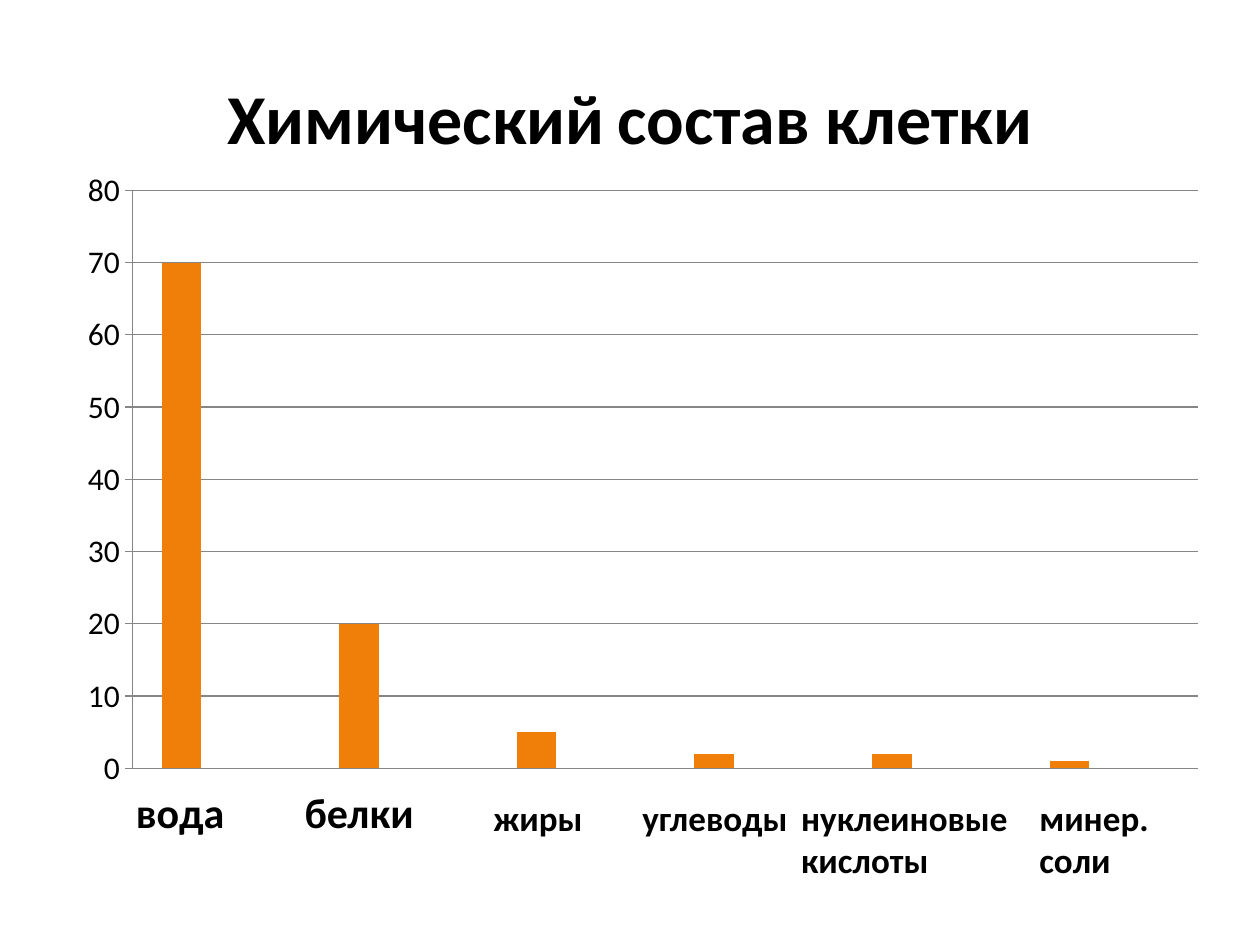
"""Build a slide with a column chart of the chemical composition of a cell."""
import lxml.etree
import pptx
import pptx.chart.data
import pptx.dml.color
import pptx.enum.chart
import pptx.enum.text
import pptx.oxml
import pptx.oxml.ns
import pptx.util

PX = 9144
COLORS = {"text": "000000", "grid": "868686", "water": "F07F09",
          "second": "9F2936", "third": "1B587C"}


class Deck:
    """Hold the style and the current slide."""

    def __init__(self, width, height, font="Calibri"):
        self.prs = pptx.Presentation()
        self.prs.slide_width, self.prs.slide_height = width * PX, height * PX
        self.font = font
        self.s = None

    def color(self, name):
        """Return a named colour."""
        return pptx.dml.color.RGBColor.from_string(COLORS[name])

    def style(self, font, size, bold=False):
        """Apply the text style to a font."""
        formats = {"name": self.font, "size": pptx.util.Pt(size), "bold": bold}
        for key, value in formats.items():
            setattr(font, key, value)
        font.color.rgb = self.color("text")

    def add_slide(self):
        """Add a title-only slide."""
        self.s = self.prs.slides.add_slide(self.prs.slide_layouts[5])

    def title(self, runs, x, y, w, h):
        """Place the title and fill it with sized runs."""
        sp = self.s.shapes.title
        box = {"left": x, "top": y, "width": w, "height": h}
        for key, value in box.items():
            setattr(sp, key, value * PX)
        tf = sp.text_frame
        tf.vertical_anchor = pptx.enum.text.MSO_ANCHOR.MIDDLE
        p = tf.paragraphs[0]
        p.alignment = pptx.enum.text.PP_ALIGN.CENTER
        for text, size in runs:
            r = p.add_run()
            r.text = text
            self.style(r.font, size, bold=True)

    def label(self, text, size, x, y, w, h):
        """Add a bold text box."""
        sp = self.s.shapes.add_textbox(x * PX, y * PX, w * PX, h * PX)
        tf = sp.text_frame
        tf.word_wrap = True
        tf.auto_size = pptx.enum.text.MSO_AUTO_SIZE.SHAPE_TO_FIT_TEXT
        tf.text = text
        for p in tf.paragraphs:
            self.style(p.runs[0].font, size, bold=True)

    def columns(self, categories, series, layout, x, y, w, h):
        """Add a clustered column chart with a fixed inner plot area."""
        data = pptx.chart.data.CategoryChartData()
        data.categories = categories
        for name, values, _ in series:
            data.add_series(name, values)
        kind = pptx.enum.chart.XL_CHART_TYPE.COLUMN_CLUSTERED
        chart = self.s.shapes.add_chart(
            kind, x * PX, y * PX, w * PX, h * PX, data).chart
        chart.has_title = chart.has_legend = False
        self.style(chart.font, 18)
        plot = chart.plots[0]
        plot.gap_width, plot.overlap, plot.vary_by_categories = 150, 0, False
        for ser, (_, _, color) in zip(plot.series, series):
            ser.format.fill.solid()
            ser.format.fill.fore_color.rgb = self.color(color)
        chart.category_axis.visible = False
        axis = chart.value_axis
        formats = {"minimum_scale": 0, "maximum_scale": 80, "major_unit": 10,
                   "has_major_gridlines": True,
                   "major_tick_mark": pptx.enum.chart.XL_TICK_MARK.OUTSIDE}
        for key, value in formats.items():
            setattr(axis, key, value)
        for line in (axis.format.line, axis.major_gridlines.format.line):
            line.color.rgb = self.color("grid")
            line.width = pptx.util.Pt(0.75)
        self.plot_layout(chart, layout)

    def plot_layout(self, chart, layout):
        """Fix the inner plot area as fractions of the chart."""
        qn = pptx.oxml.ns.qn
        area = chart.plots[0]._element.getparent()
        for old in area.findall(qn("c:layout")):
            area.remove(old)
        outer = pptx.oxml.parse_xml(
            f"<c:layout {pptx.oxml.ns.nsdecls('c')}><c:manualLayout/></c:layout>")
        values = {"layoutTarget": "inner", "xMode": "edge", "yMode": "edge"}
        values.update(zip("xywh", layout))
        for tag, value in values.items():
            lxml.etree.SubElement(outer[0], qn(f"c:{tag}"), val=str(value))
        area.insert(0, outer)


def main():
    """Build and save the slide."""
    deck = Deck(1000, 750)
    deck.add_slide()
    deck.title([("Химический", 40), (" ", 32), ("состав клетки", 40)],
               50, 30, 900, 125)
    empty = [None] * 6
    series = [("Series 1", [70, 20, 5, 2, 2, 1], "water"),
              ("Series 2", empty, "second"),
              ("Series 3", empty, "third")]
    deck.columns(list("123456"), series, (0.06, 0.04, 0.94, 0.91),
                 51, 131, 900, 504)
    for text, x, w in (("вода", 98, 94), ("белки", 232, 150)):
        deck.label(text, 24, x, 619, w, 51)
    for text, x, w, h in (("жиры", 382, 94, 44),
                          ("углеводы", 500, 183, 44),
                          ("нуклеиновые\nкислоты", 626, 205, 77),
                          ("минер.\nсоли", 815, 148, 77)):
        deck.label(text, 20, x, 627, w, h)
    deck.prs.save("out.pptx")


if __name__ == "__main__":
    main()
